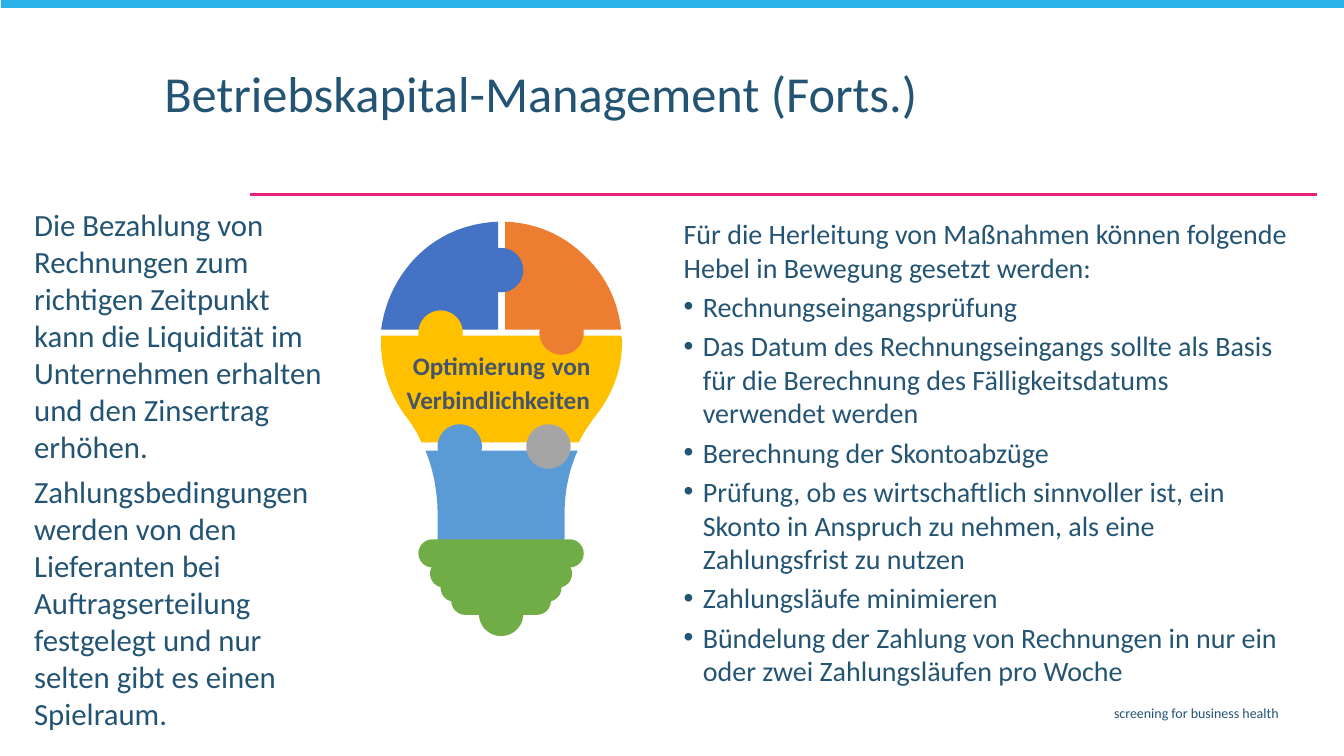
from dataclasses import dataclass

from lxml.etree import SubElement
from pptx import Presentation
from pptx.dml.color import RGBColor as RGB
from pptx.enum.shapes import MSO_CONNECTOR, MSO_SHAPE as Preset
from pptx.enum.text import MSO_ANCHOR as Anchor, MSO_AUTO_SIZE as AutoSize, PP_ALIGN as Align
from pptx.oxml.ns import qn
from pptx.util import Inches, Pt


@dataclass(frozen=True)
class Theme:
    font: str = "Calibri"
    text: str = "245473"
    label: str = "44546A"
    band: str = "29B3E8"
    rule: str = "EC2179"
    blue: str = "4472C4"
    orange: str = "ED7D31"
    yellow: str = "FFC000"
    sky: str = "5B9BD5"
    grey: str = "A5A5A5"
    green: str = "70AD47"
    title_size: int = 36
    intro_size: int = 22
    body_size: int = 20
    label_size: int = 18
    footer_size: int = 10


theme = Theme()


def paint(shape, color):
    shape.shadow.inherit = False
    shape.fill.solid()
    shape.fill.fore_color.rgb = RGB.from_string(color)
    shape.line.fill.background()


def write(paragraph, text, size, color=theme.text, bold=False):
    run = paragraph.add_run()
    run.text = text
    run.font.name = theme.font
    run.font.size = Pt(size)
    run.font.bold = bold
    run.font.color.rgb = RGB.from_string(color)


deck = Presentation()
deck.slide_width, deck.slide_height = Inches(13.33), Inches(7.5)
slide = deck.slides.add_slide(deck.slide_layouts[5])
shapes = slide.shapes

# Header rule and top band
rule = shapes.add_connector(MSO_CONNECTOR.STRAIGHT, Inches(13.06), Inches(1.93), Inches(2.48), Inches(1.93))
rule.line.color.rgb = RGB.from_string(theme.rule)
rule.line.width = Pt(1.5)
SubElement(rule._element.spPr, qn("a:effectLst"))
band = shapes.add_shape(Preset.RECTANGLE, Inches(0.01), Inches(-0.02), Inches(13.34), Inches(0.1))
paint(band, theme.band)

# Title
title = shapes.title
title.left, title.top, title.width, title.height = Inches(1.53), Inches(0.63), Inches(9.68), Inches(0.76)
title.text_frame.auto_size = AutoSize.NONE
title.text_frame.vertical_anchor = Anchor.TOP
heading = title.text_frame.paragraphs[0]
heading.alignment = Align.LEFT
heading.line_spacing = 0.9
write(heading, "Betriebskapital-Management (Forts.)", theme.title_size)

# Footer
footer = shapes.add_textbox(Inches(3.65), Inches(6.94), Inches(9.13), Inches(0.29)).text_frame
footer.word_wrap = True
footer.paragraphs[0].alignment = Align.RIGHT
write(footer.paragraphs[0], "screening for business health", theme.footer_size)

# Introduction on the left
intro = shapes.add_textbox(Inches(0.24), Inches(1.99), Inches(3.18), Inches(5.81)).text_frame
intro.word_wrap = True
intro_texts = [
    "Die Bezahlung von Rechnungen zum richtigen Zeitpunkt kann die Liquidität im "
    "Unternehmen erhalten und den Zinsertrag erhöhen.",
    "Zahlungsbedingungen werden von den Lieferanten bei Auftragserteilung festgelegt "
    "und nur selten gibt es einen Spielraum.",
]
for index, text in enumerate(intro_texts):
    paragraph = intro.add_paragraph() if index else intro.paragraphs[0]
    paragraph.space_before = Pt(6 if index else 0)
    write(paragraph, text, theme.intro_size)

# Bulb pieces: pairs are corners, sextets are Bézier curves
bulb_pieces = [
    (theme.yellow, [(4.94, 4.39), (4.94, 3.33), (6.16, 3.33), (6.17, 3.35, 6.17, 3.38, 6.17, 3.4),
                    (6.17, 3.66, 6.08, 3.9, 5.92, 4.11), (5.85, 4.2, 5.79, 4.29, 5.74, 4.39)]),
    (theme.orange, [(5.01, 3.27), (5.01, 2.2), (5.3, 2.21, 5.57, 2.32, 5.78, 2.52),
                    (6, 2.72, 6.13, 2.98, 6.16, 3.27)]),
    (theme.sky, [(4.52, 5.5), (4.42, 5.5, 4.34, 5.42, 4.34, 5.33), (4.34, 5.1),
                 (4.34, 4.88, 4.3, 4.67, 4.22, 4.47), (5.73, 4.47),
                 (5.64, 4.67, 5.6, 4.88, 5.6, 5.1), (5.6, 5.33), (5.6, 5.42, 5.52, 5.5, 5.42, 5.5)]),
    (theme.yellow, [(4.18, 4.39), (4.14, 4.29, 4.08, 4.2, 4.01, 4.11),
                    (3.86, 3.9, 3.78, 3.66, 3.78, 3.4), (3.78, 3.33), (4.94, 3.33), (4.94, 4.39)]),
    (theme.blue, [(3.78, 3.27), (3.82, 2.98, 3.95, 2.72, 4.16, 2.52),
                  (4.37, 2.32, 4.65, 2.21, 4.94, 2.2), (4.94, 3.27)]),
]
curve_steps = 12
for color, segments in bulb_pieces:
    outline = [segments[0]]
    for segment in segments[1:]:
        if len(segment) == 2:
            outline.append(segment)
            continue
        x0, y0 = outline[-1]
        x1, y1, x2, y2, x3, y3 = segment
        for step in range(1, curve_steps + 1):
            t = step / curve_steps
            a, b, c, d = (1 - t) ** 3, 3 * t * (1 - t) ** 2, 3 * t * t * (1 - t), t ** 3
            outline.append((a * x0 + b * x1 + c * x2 + d * x3, a * y0 + b * y1 + c * y2 + d * y3))
    corners = [(Inches(x), Inches(y)) for x, y in outline]
    builder = shapes.build_freeform(*corners[0])
    builder.add_line_segments(corners[1:], close=True)
    paint(builder.convert_to_shape(), color)

# Round puzzle knobs and the tip of the socket
knob_size = 0.44
knobs = [
    (4.75, 2.46, theme.blue),
    (5.35, 3.08, theme.orange),
    (5.22, 4.21, theme.grey),
    (4.34, 4.21, theme.sky),
    (4.15, 3.08, theme.yellow),
    (4.75, 5.87, theme.green),
]
for left, top, color in knobs:
    knob = shapes.add_shape(Preset.OVAL, Inches(left), Inches(top), Inches(knob_size), Inches(knob_size))
    paint(knob, color)

# Socket rings, centred on the bulb axis
bulb_axis = 4.97
for top, width in [(5.82, 0.99), (5.69, 1.2), (5.55, 1.41), (5.35, 1.64)]:
    ring = shapes.add_shape(Preset.ROUNDED_RECTANGLE, Inches(bulb_axis - width / 2), Inches(top),
                            Inches(width), Inches(0.28))
    ring.adjustments[0] = 0.5
    paint(ring, theme.green)

# Levers on the right
levers = shapes.add_textbox(Inches(6.74), Inches(2.13), Inches(6.09), Inches(4.82)).text_frame
levers.word_wrap = True
levers.margin_left = levers.margin_right = Inches(0.04)
levers.margin_top = levers.margin_bottom = Inches(0.02)
write(levers.paragraphs[0],
      "Für die Herleitung von Maßnahmen können folgende Hebel in Bewegung gesetzt werden:",
      theme.body_size)
lever_texts = [
    "Rechnungseingangsprüfung",
    "Das Datum des Rechnungseingangs sollte als Basis für die Berechnung des "
    "Fälligkeitsdatums verwendet werden",
    "Berechnung der Skontoabzüge",
    "Prüfung, ob es wirtschaftlich sinnvoller ist, ein Skonto in Anspruch zu nehmen, "
    "als eine Zahlungsfrist zu nutzen",
    "Zahlungsläufe minimieren",
    "Bündelung der Zahlung von Rechnungen in nur ein oder zwei Zahlungsläufen pro Woche",
]
for text in lever_texts:
    paragraph = levers.add_paragraph()
    properties = paragraph._p.get_or_add_pPr()
    properties.set("marL", str(Inches(0.19)))
    properties.set("indent", str(-Inches(0.19)))
    SubElement(properties, qn("a:buFont"), typeface="Arial")
    SubElement(properties, qn("a:buChar"), char="•")
    paragraph.space_before = Pt(4)
    write(paragraph, text, theme.body_size)

# Bulb label
label = shapes.add_textbox(Inches(3.89), Inches(3.4), Inches(2.17), Inches(0.77)).text_frame
label.word_wrap = True
label.vertical_anchor = Anchor.MIDDLE
label.paragraphs[0].alignment = Align.CENTER
for word in ["Optimierung", "von", "Verbindlichkeiten"]:
    write(label.paragraphs[0], word, theme.label_size, theme.label, bold=True)
    write(label.paragraphs[0], " ", theme.body_size, theme.label, bold=True)

deck.save("out.pptx")
